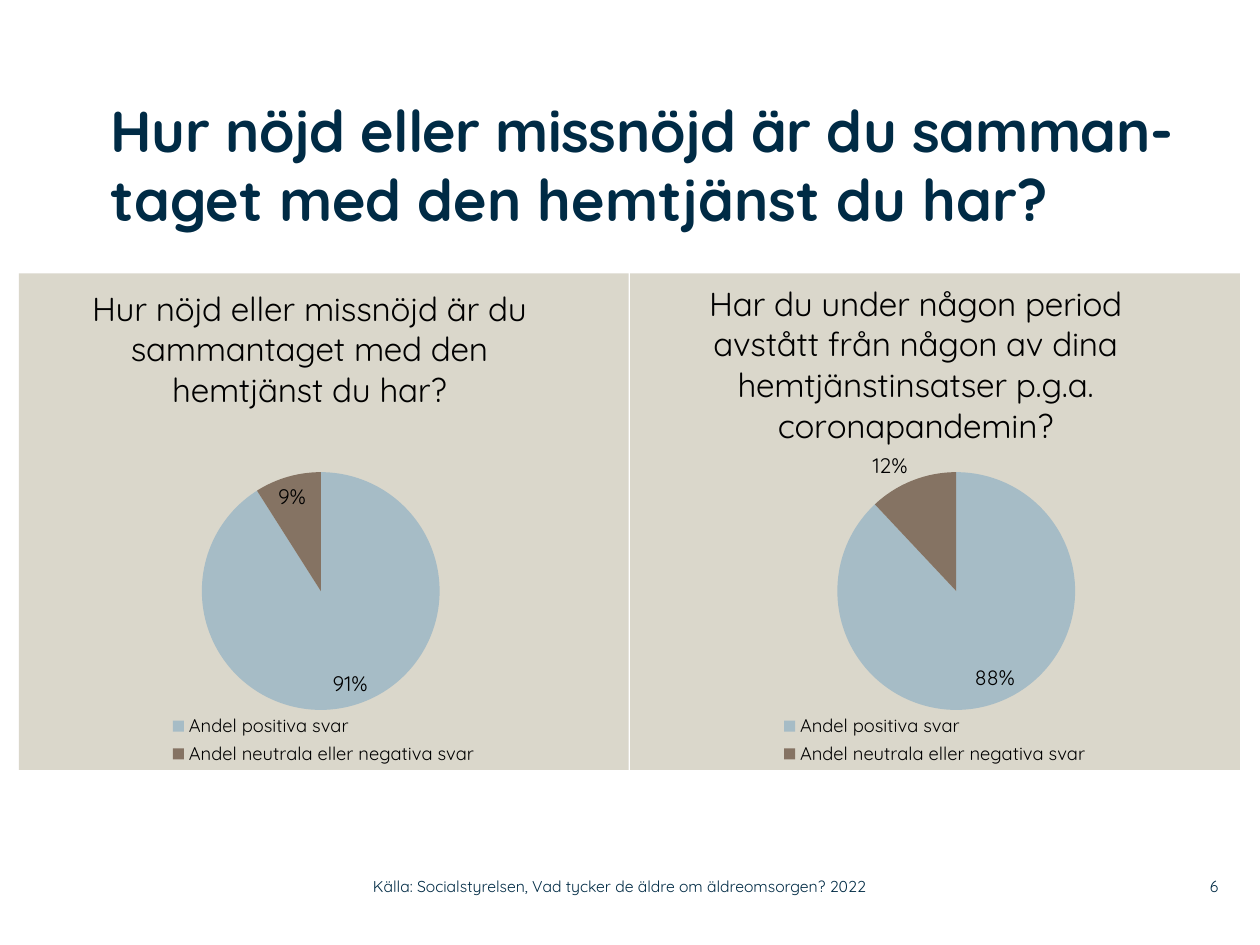
from lxml.etree import SubElement
from pptx import Presentation
from pptx.chart.data import CategoryChartData
from pptx.dml.color import RGBColor
from pptx.enum.chart import XL_CHART_TYPE, XL_LABEL_POSITION, XL_LEGEND_POSITION
from pptx.enum.text import MSO_ANCHOR, PP_ALIGN
from pptx.oxml import parse_xml
from pptx.oxml.ns import nsdecls, qn
from pptx.util import Inches, Pt

NAVY = RGBColor(0x00, 0x2B, 0x45)
BLACK = RGBColor(0x00, 0x00, 0x00)
SAND = RGBColor(0xDA, 0xD7, 0xCB)
BLUE = RGBColor(0xA6, 0xBC, 0xC6)
BROWN = RGBColor(0x85, 0x73, 0x63)
FONT = "Quicksand"
ANSWERS = ["Andel positiva svar", "Andel neutrala eller negativa svar"]

MARGIN, PANEL_TOP, PANEL_WIDTH, PANEL_HEIGHT, GAP = 0.15, 2.17, 4.84, 3.94, 0.01
FOOTER_TOP, FOOTER_HEIGHT = 6.89, 0.29


def style(font, size, color=BLACK, bold=False):
    font.name = FONT
    font.size = Pt(size)
    font.color.rgb = color
    font.bold = bold


def add_text(slide, box, parts, size, bold=False, align=PP_ALIGN.LEFT, anchor=MSO_ANCHOR.MIDDLE):
    frame = slide.shapes.add_textbox(*map(Inches, box)).text_frame
    frame.word_wrap = True
    frame.margin_left = frame.margin_right = frame.margin_top = frame.margin_bottom = 0
    frame.vertical_anchor = anchor
    paragraph = frame.paragraphs[0]
    paragraph.alignment = align
    for part in parts:
        run = paragraph.add_run()
        run.text = part
        style(run.font, size, NAVY, bold)
    return paragraph


def layout_xml(inner=False, edge=True, **shares):
    target = '<c:layoutTarget val="inner"/>' if inner else ""
    modes = '<c:xMode val="edge"/><c:yMode val="edge"/>' if edge else ""
    values = "".join(f'<c:{key} val="{value}"/>' for key, value in shares.items())
    return parse_xml(
        f'<c:layout {nsdecls("c")}><c:manualLayout>{target}{modes}{values}</c:manualLayout></c:layout>'
    )


def set_layout(element, layout, after=None):
    for old in element.findall(qn("c:layout")):
        element.remove(old)
    if after:
        element.find(qn(after)).addnext(layout)
    else:
        element.insert(0, layout)


def move_label(point, dx, dy):
    style(point.data_label.font, 12)
    point.data_label.position = XL_LABEL_POSITION.INSIDE_END
    label = point.data_label._get_or_add_dLbl()
    label.find(qn("c:showVal")).set("val", "0")
    label.find(qn("c:showPercent")).set("val", "1")
    set_layout(label, layout_xml(edge=False, x=dx, y=dy), "c:idx")


def add_pie_panel(slide, box, question, shares, title_at, plot_at, legend_at, label_offset=None):
    data = CategoryChartData()
    data.categories = ANSWERS
    data.add_series("Series 1", shares)
    chart = slide.shapes.add_chart(XL_CHART_TYPE.PIE, *map(Inches, box), data).chart
    style(chart.font, 18)

    chart.has_title = True
    chart.chart_title.text_frame.text = question
    style(chart.chart_title.text_frame.paragraphs[0].runs[0].font, 19)
    chart.chart_title.include_in_layout = False
    title_x, title_y = title_at
    set_layout(chart.chart_title._element, layout_xml(x=title_x, y=title_y), "c:tx")

    chart.has_legend = True
    chart.legend.position = XL_LEGEND_POSITION.BOTTOM
    chart.legend.include_in_layout = False
    style(chart.legend.font, 10.5)
    legend_x, legend_y = legend_at
    set_layout(
        chart.legend._element,
        layout_xml(x=legend_x, y=legend_y, w=0.52, h=0.12),
        "c:legendPos",
    )

    plot = chart.plots[0]
    plot.vary_by_categories = True
    x, y, w, h = plot_at
    set_layout(plot._element.getparent(), layout_xml(inner=True, x=x, y=y, w=w, h=h))

    series = plot.series[0]
    for index, color in enumerate((BLUE, BROWN)):
        slice_format = series.points[index].format
        slice_format.fill.solid()
        slice_format.fill.fore_color.rgb = color
        slice_format.line.fill.background()

    labels = series.data_labels
    style(labels.font, 12)
    labels.show_value = False
    labels.show_percentage = True
    labels.number_format = "0%"
    labels.number_format_is_linked = False
    labels.position = XL_LABEL_POSITION.BEST_FIT
    if label_offset:
        move_label(series.points[1], *label_offset)

    panel = parse_xml(
        f'<c:spPr {nsdecls("c", "a")}><a:solidFill/><a:ln><a:noFill/></a:ln></c:spPr>'
    )
    SubElement(panel.find(qn("a:solidFill")), qn("a:srgbClr")).set("val", str(SAND))
    chart._chartSpace.find(qn("c:chart")).addnext(panel)


def add_heading(slide, box):
    heading = add_text(
        slide,
        box,
        ["Hur nöjd eller missnöjd är du samman-", "taget med den hemtjänst du har?"],
        33,
        bold=True,
        anchor=MSO_ANCHOR.TOP,
    )
    heading.line_spacing = 1.0
    heading.runs[0].font._element.set("spc", "-30")


def add_footer(slide, top, height):
    source = "Källa: Socialstyrelsen, Vad tycker de äldre om äldreomsorgen? 2022"
    add_text(slide, (2.96, top, 4.43, height), [source], 9)
    add_text(slide, (9.2, top, 0.47, height), ["6"], 9, align=PP_ALIGN.RIGHT)


def main():
    deck = Presentation()
    deck.slide_width, deck.slide_height = Inches(10), Inches(7.5)
    slide = deck.slides.add_slide(deck.slide_layouts[6])
    add_heading(slide, (0.88, 0.75, 8.94, 1.42))
    left, right = (
        (MARGIN + column * (PANEL_WIDTH + GAP), PANEL_TOP, PANEL_WIDTH, PANEL_HEIGHT)
        for column in range(2)
    )
    add_pie_panel(
        slide,
        right,
        "Har du under någon period avstått från någon av dina hemtjänstinsatser p.g.a. coronapandemin?",
        (88, 12),
        title_at=(0.12, 0),
        plot_at=(0.34, 0.4, 0.39, 0.48),
        legend_at=(0.24, 0.88),
        label_offset=(-0.07, -0.07),
    )
    add_pie_panel(
        slide,
        left,
        "Hur nöjd eller missnöjd är du sammantaget med den hemtjänst du har?",
        (91, 9),
        title_at=(0.11, 0.01),
        plot_at=(0.3, 0.4, 0.39, 0.48),
        legend_at=(0.24, 0.88),
    )
    add_footer(slide, FOOTER_TOP, FOOTER_HEIGHT)
    deck.save("out.pptx")


if __name__ == "__main__":
    main()
